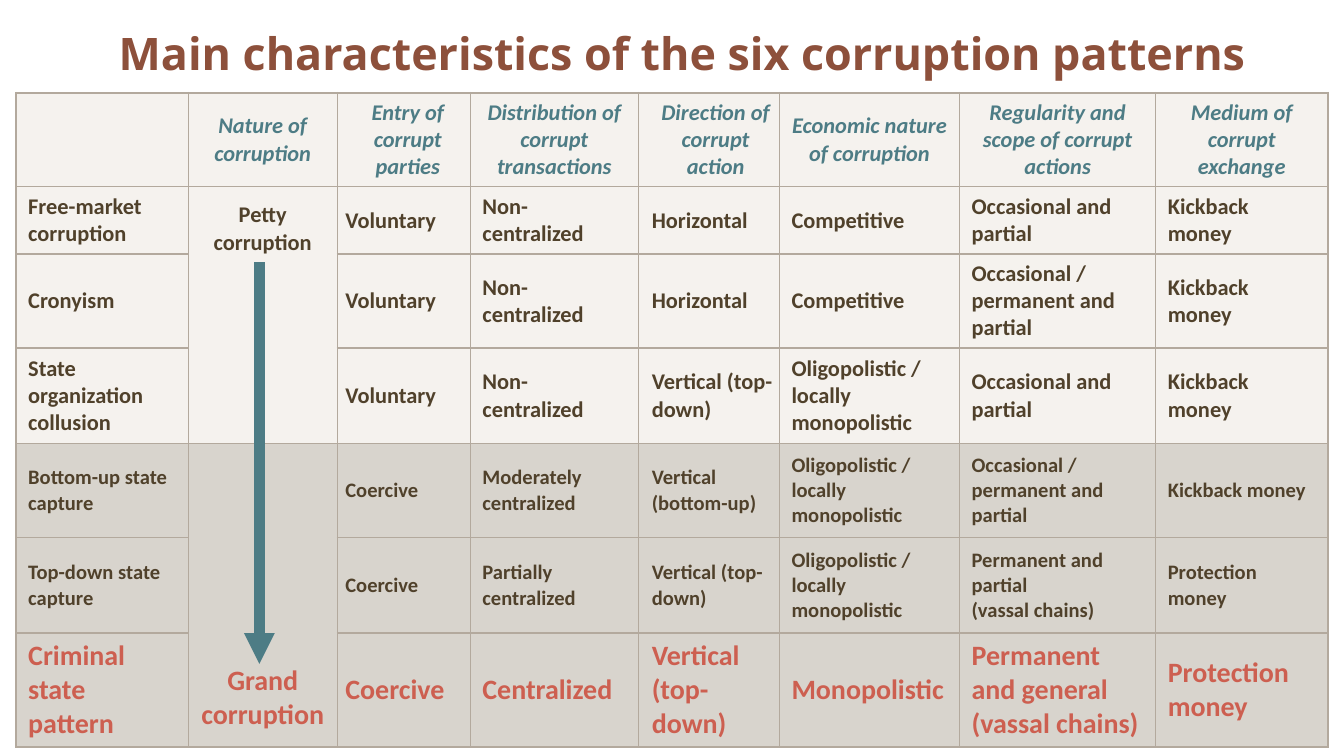
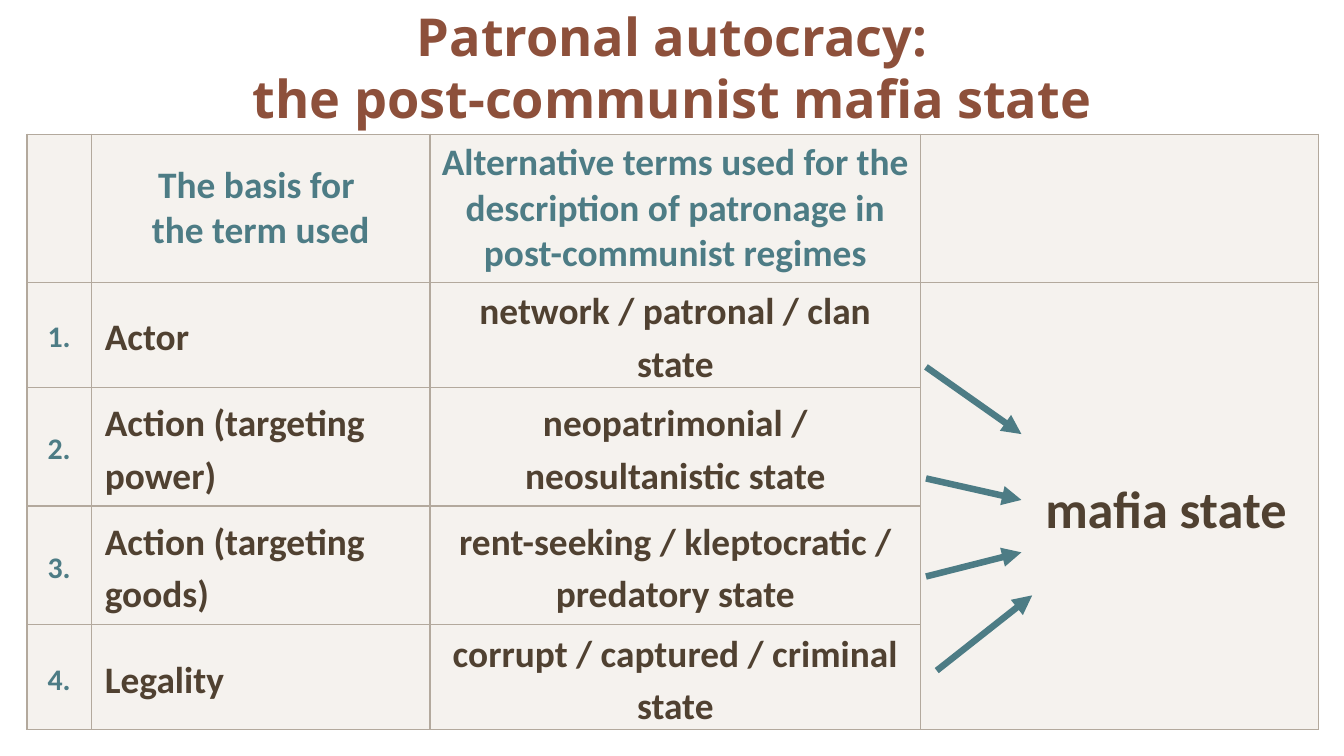
from lxml.etree import SubElement
from pptx import Presentation
from pptx.dml.color import RGBColor
from pptx.enum.shapes import MSO_CONNECTOR
from pptx.enum.text import MSO_ANCHOR as Anchor, MSO_AUTO_SIZE as AutoSize, PP_ALIGN as Align
from pptx.oxml.ns import qn
from pptx.util import Inches, Pt

SLIDE_WIDTH = 10
SLIDE_HEIGHT = SLIDE_WIDTH * 9 / 16

RUST, TEAL, RED = "8D503B", "4D7C85", "CD5F50"
BROWN, DARK, BORDER = "50412B", "504131", "B3A99D"
LIGHT, SHADED = ("EFEAE4", 60), ("B3AA9D", 50)

PATTERNS_TITLE = "Main characteristics of the six corruption patterns"
PATTERNS = [
    ["", "Nature of corruption", "Entry of corrupt parties", "Distribution of corrupt transactions",
     "Direction of corrupt action", "Economic nature of corruption",
     "Regularity and scope of corrupt actions", "Medium of corrupt exchange"],
    ["Free-market corruption", "Petty corruption", "Voluntary", "Non-centralized", "Horizontal",
     "Competitive", "Occasional and partial", "Kickback money"],
    ["Cronyism", "", "Voluntary", "Non-centralized", "Horizontal",
     "Competitive", "Occasional / permanent and partial", "Kickback money"],
    ["State organization collusion", "", "Voluntary", "Non-centralized", "Vertical (top-down)",
     "Oligopolistic / locally monopolistic", "Occasional and partial", "Kickback money"],
    ["Bottom-up state\ncapture", "Grand corruption", "Coercive", "Moderately centralized",
     "Vertical (bottom-up)", "Oligopolistic / locally monopolistic",
     "Occasional / permanent and partial", "Kickback money"],
    ["Top-down state capture", "", "Coercive", "Partially centralized", "Vertical (top-down)",
     "Oligopolistic / locally monopolistic", "Permanent and partial\n(vassal chains)",
     "Protection money"],
    ["Criminal state pattern", "", "Coercive", "Centralized", "Vertical (top-down)",
     "Monopolistic", "Permanent and general\n(vassal chains)", "Protection money"],
]
PATTERN_COLUMNS = [1.28, 1.11, 0.99, 1.25, 1.05, 1.34, 1.46, 1.28]
PATTERN_ROWS = [0.7, 0.5, 0.7, 0.71, 0.7, 0.71, 0.85]
PATTERN_INDENTS = {2: 0.06, 4: 0.1}

TERMS_TITLE = "Patronal autocracy:\nthe post-communist mafia state"
TERMS = [
    ["", "The basis for \nthe term used",
     "Alternative terms used for the description of patronage in post-communist regimes", ""],
    ["1.", "Actor", "network / patronal / clan state", "mafia state"],
    ["2.", "Action (targeting power)", "neopatrimonial / neosultanistic state", ""],
    ["3.", "Action (targeting goods)", "rent-seeking / kleptocratic / predatory state", ""],
    ["4.", "Legality", "corrupt / captured / criminal state", ""],
]
TERM_COLUMNS = [0.48, 2.52, 3.65, 2.96]
TERM_ROWS = [1.1, 0.78, 0.88, 0.88, 0.78]
TERM_STYLES = [
    {"size": 16, "color": TEAL, "align": Align.CENTER},
    {"size": 20, "color": DARK, "align": Align.LEFT, "insets": (0.1, 0.05)},
    {"size": 20, "color": DARK, "align": Align.CENTER},
    {"size": 28, "color": DARK, "align": Align.CENTER, "indent": 0.69},
]
TERM_ARROWS = [
    (6.89, 2.73, 7.6, 3.23),
    (6.89, 3.56, 7.6, 3.72),
    (6.89, 4.29, 7.6, 4.11),
    (6.97, 4.99, 7.68, 4.43),
]


def rgb(color):
    return RGBColor.from_string(color)


def apply(target, values):
    for name, value in values.items():
        setattr(target, name, value)


def format_text(frame, color, size, font="Calibri", align=Align.LEFT, italic=False,
                spacing=1.0, indent=0):
    for paragraph in frame.paragraphs:
        apply(paragraph, {"alignment": align, "line_spacing": spacing})
        if indent:
            paragraph._p.get_or_add_pPr().set("marL", str(Inches(indent)))
        apply(paragraph.font, {"name": font, "size": Pt(size), "bold": True, "italic": italic})
        paragraph.font.color.rgb = rgb(color)


def add_titled_slide(presentation, text, box, size, anchor):
    slide = presentation.slides.add_slide(presentation.slide_layouts[5])
    title = slide.shapes.title
    apply(title, dict(zip(("left", "top", "width", "height"), map(Inches, box))))
    frame = title.text_frame
    frame.text = text
    apply(frame, {"word_wrap": True, "auto_size": AutoSize.NONE, "vertical_anchor": anchor})
    format_text(frame, RUST, size, "Open Sans", Align.CENTER)
    return slide


def set_borders(cell, widths):
    properties = cell._tc.get_or_add_tcPr()
    for index, (side, width) in enumerate(widths.items()):
        line = SubElement(properties, qn(f"a:ln{side}"), w=str(Pt(width)))
        fill = SubElement(line, qn("a:solidFill"))
        SubElement(fill, qn("a:srgbClr"), val=BORDER)
        properties.insert(index, line)


def format_cell(cell, text, style):
    color, opacity = style["fill"]
    cell.fill.solid()
    cell.fill.fore_color.rgb = rgb(color)
    shade = cell._tc.tcPr.find(".//" + qn("a:srgbClr"))
    SubElement(shade, qn("a:alpha"), val=str(opacity * 1000))
    across, down = map(Inches, style["insets"])
    apply(cell, {"margin_left": across, "margin_right": across, "margin_top": down,
                 "margin_bottom": down, "vertical_anchor": style.get("anchor", Anchor.MIDDLE)})
    cell.text = text
    format_text(cell.text_frame, **{name: value for name, value in style.items()
                                    if name not in ("fill", "insets", "anchor")})


def add_grid(slide, left, top, rows, columns, content, merges, style_of):
    frame = slide.shapes.add_table(len(rows), len(columns), Inches(left), Inches(top),
                                   Inches(sum(columns)), Inches(sum(rows)))
    table = frame.table
    apply(table, {"first_row": False, "horz_banding": False})
    for column, width in zip(table.columns, columns):
        column.width = Inches(width)
    for row, height in zip(table.rows, rows):
        row.height = Inches(height)
    for first, last, column in merges:
        table.cell(first, column).merge(table.cell(last, column))
    last_row, last_column = len(rows) - 1, len(columns) - 1
    for row, texts in enumerate(content):
        for column, text in enumerate(texts):
            cell = table.cell(row, column)
            outer = {"L": column == 0, "R": column == last_column,
                     "T": row == 0, "B": row == last_row}
            if cell.is_merge_origin:
                outer["B"] = row + cell.span_height > last_row
            format_cell(cell, text, style_of(row, column))
            set_borders(cell, {side: 1 if edge else 0.75 for side, edge in outer.items()
                               if edge or side in "LR" or not cell.is_spanned})


def add_arrow(slide, points, width):
    arrow = slide.shapes.add_connector(MSO_CONNECTOR.STRAIGHT, *map(Inches, points))
    arrow.line.color.rgb = rgb(TEAL)
    arrow.line.width = Pt(width)
    SubElement(arrow.line._ln, qn("a:tailEnd"), type="triangle")
    SubElement(arrow._element.spPr, qn("a:effectLst"))


def pattern_style(row, column):
    style = {"fill": LIGHT if row < 4 else SHADED,
             "insets": (0, 0) if column in (1, 2, 4) else (0.09, 0.04),
             "indent": PATTERN_INDENTS.get(column, 0), "color": BROWN,
             "size": 12 if row < 4 else 11}
    if row == 0:
        style.update(color=TEAL, italic=True, align=Align.CENTER)
    elif column == 1:
        style.update(align=Align.CENTER, insets=(0, 0.11),
                     anchor=Anchor.TOP if row < 4 else Anchor.BOTTOM)
    if row == 6 or (column == 1 and row > 3):
        style.update(color=RED, size=15)
    return style


def term_style(row, column):
    style = {"fill": LIGHT, "insets": (0.07, 0)}
    if row == 0:
        style.update(color=TEAL, size=20, align=Align.CENTER)
    else:
        style.update(TERM_STYLES[column], spacing=1.15)
    return style


def build_patterns(presentation):
    slide = add_titled_slide(presentation, PATTERNS_TITLE, (0.51, 0.14, 9.13, 0.39), 24, Anchor.TOP)
    add_grid(slide, 0.12, 0.69, PATTERN_ROWS, PATTERN_COLUMNS, PATTERNS,
             [(1, 3, 1), (4, 6, 1)], pattern_style)
    add_arrow(slide, (1.93, 1.95, 1.93, 4.94), 5.5)


def build_terms(presentation):
    slide = add_titled_slide(presentation, TERMS_TITLE, (0.12, 0.14, 9.76, 0.71), 28, Anchor.MIDDLE)
    add_grid(slide, 0.2, 1, TERM_ROWS, TERM_COLUMNS, TERMS, [(1, 4, 3)], term_style)
    for points in TERM_ARROWS:
        add_arrow(slide, points, 3.5)


def main():
    presentation = Presentation()
    apply(presentation, {"slide_width": Inches(SLIDE_WIDTH), "slide_height": Inches(SLIDE_HEIGHT)})
    build_patterns(presentation)
    build_terms(presentation)
    presentation.save("out.pptx")


if __name__ == "__main__":
    main()
